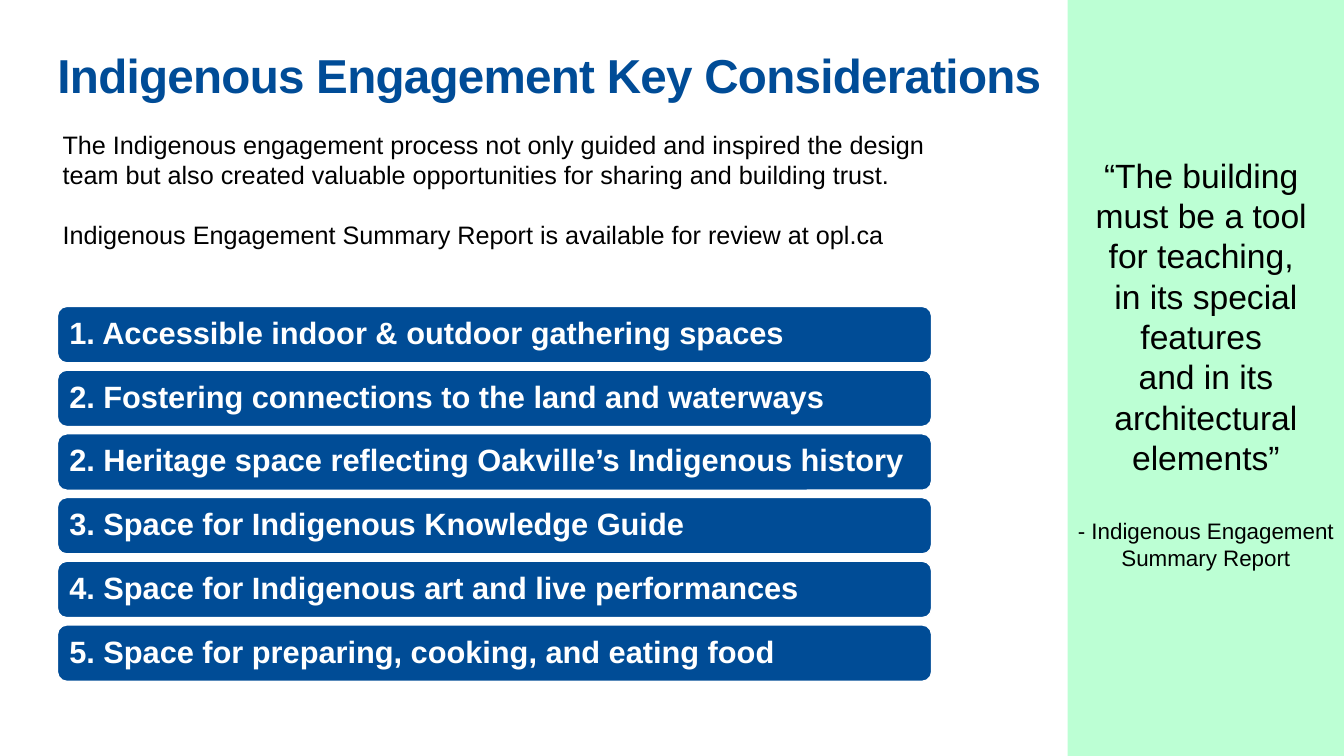
"""Build the Indigenous Engagement Key Considerations slide."""
from lxml import etree
from pptx import Presentation
from pptx.dml.color import RGBColor
from pptx.enum.shapes import MSO_SHAPE
from pptx.enum.text import MSO_ANCHOR, MSO_AUTO_SIZE, PP_ALIGN
from pptx.oxml.ns import qn
from pptx.util import Inches, Pt

RECT, ROUNDED = MSO_SHAPE.RECTANGLE, MSO_SHAPE.ROUNDED_RECTANGLE
TOP, MIDDLE = MSO_ANCHOR.TOP, MSO_ANCHOR.MIDDLE
LEFT, CENTER = PP_ALIGN.LEFT, PP_ALIGN.CENTER
NO_FIT = MSO_AUTO_SIZE.NONE
TITLE_BLUE = RGBColor(0x00, 0x4C, 0x97)
BAR_BLUE = RGBColor(0x00, 0x4C, 0x96)
MINT = RGBColor(0xBC, 0xFF, 0xD4)
WHITE = RGBColor(0xFF, 0xFF, 0xFF)
BLACK = RGBColor(0x00, 0x00, 0x00)

TITLE = "Indigenous Engagement Key Considerations"
INTRO = [
    "The Indigenous engagement process not only guided and inspired the design team "
    "but also created valuable opportunities for sharing and building trust.",
    "Indigenous Engagement Summary Report is available for review at opl.ca",
]
CONSIDERATIONS = [
    "1. Accessible indoor & outdoor gathering spaces",
    "2. Fostering connections to the land and waterways",
    "2. Heritage space reflecting Oakville’s Indigenous history",
    "3. Space for Indigenous Knowledge Guide",
    "4. Space for Indigenous art and live performances",
    "5. Space for preparing, cooking, and eating food",
]
QUOTE = [
    "“The building ",
    "must be a tool ",
    "for teaching, ",
    "in its special features ",
    "and in its architectural elements”",
    "- Indigenous Engagement Summary Report",
]
BAR_TOP, BAR_STEP = 3.04, 3.16 / 5


def write(sp, lines, anchor, align, spacing=1.0, **font):
    tf = sp.text_frame
    tf.auto_size, tf.word_wrap, tf.vertical_anchor = NO_FIT, True, anchor
    for i, line in enumerate(lines):
        p = tf.paragraphs[0] if i == 0 else tf.add_paragraph()
        p.alignment, p.line_spacing = align, spacing
        p.space_before = p.space_after = Pt(0)
        r = p.add_run()
        r.text = line
        for name, value in {"name": "Arial", **font}.items():
            if name == "color":
                r.font.color.rgb = value
            else:
                setattr(r.font, name, value)
    return tf


def add_block(shape, left, top, width, height, fill):
    sp = s.shapes.add_shape(shape, Inches(left), Inches(top), Inches(width), Inches(height))
    sp.shadow.inherit = False
    sp.fill.solid()
    sp.fill.fore_color.rgb = fill
    return sp


prs = Presentation()
prs.slide_width, prs.slide_height = Inches(13.33), Inches(7.5)
s = prs.slides.add_slide(prs.slide_layouts[1])

title, body = s.placeholders
for sp, box in ((title, (0.47, 0.32, 10.12, 0.91)), (body, (0.52, 1.23, 8.86, 1.31))):
    sp.left, sp.top, sp.width, sp.height = map(Inches, box)

tf = write(title, [TITLE], MIDDLE, LEFT, 0.9, size=Pt(34), bold=True, color=TITLE_BLUE)
tf.paragraphs[0].runs[0].font._element.set("spc", "-50")

tf = write(body, INTRO, TOP, LEFT, size=Pt(18), color=BLACK)
tf.paragraphs[1].space_before = Pt(21.5)
for p in tf.paragraphs:
    pPr = p._p.get_or_add_pPr()
    pPr.set("marL", "0")
    pPr.set("indent", "0")
    etree.SubElement(pPr, qn("a:buNone"))

for i, consideration in enumerate(CONSIDERATIONS):
    bar = add_block(ROUNDED, 0.57, BAR_TOP + i * BAR_STEP, 8.67, 0.56, BAR_BLUE)
    bar.line.color.rgb = WHITE
    bar.line.width = Pt(1)
    tf = write(bar, [consideration], MIDDLE, LEFT, 0.9, size=Pt(22), bold=True, color=WHITE)
    tf.margin_left = Inches(0.09)

panel = add_block(RECT, 10.59, 0, 2.74, 7.5, MINT)
panel.line.fill.background()
tf = write(panel, QUOTE, MIDDLE, CENTER, size=Pt(24), color=BLACK)
tf.margin_bottom = Inches(0.35)
source = tf.paragraphs[-1]
source.space_before = Pt(28.8)
source.runs[0].font.size = Pt(16)

prs.save("out.pptx")
